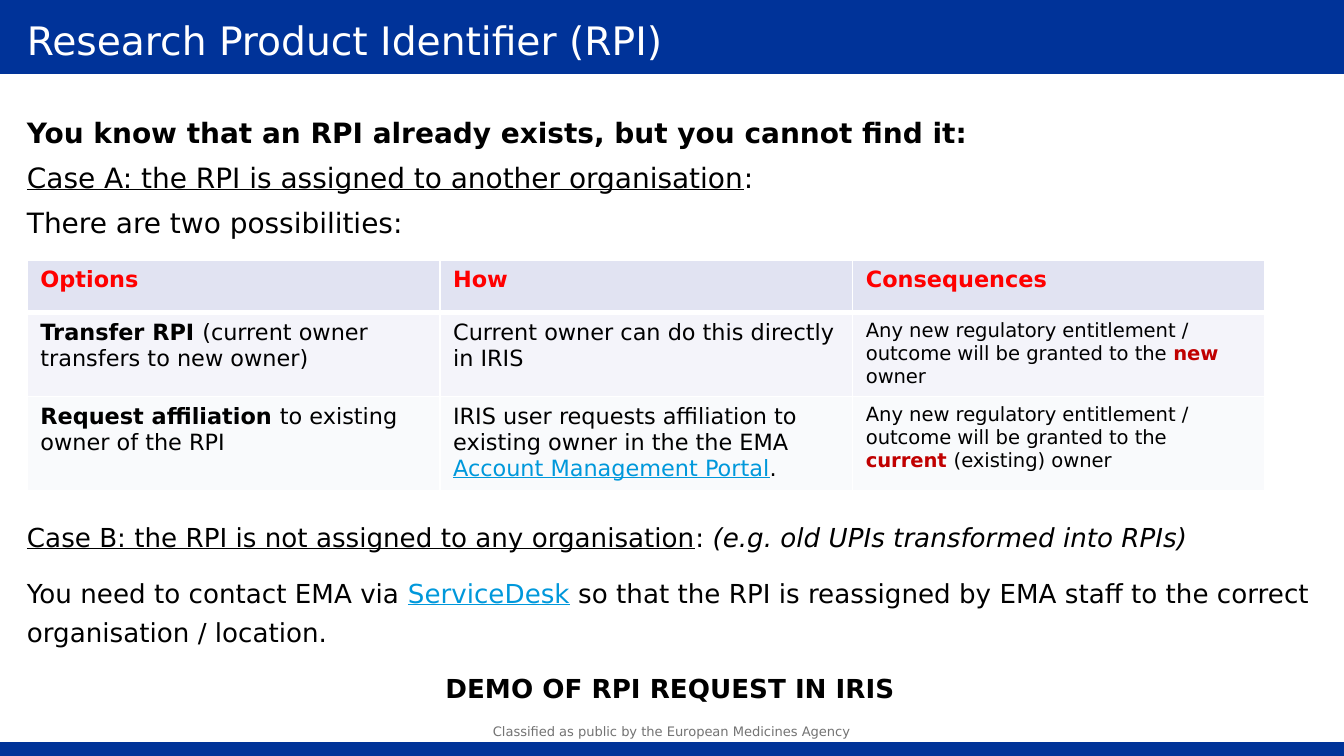
from lxml.etree import SubElement
from pptx import Presentation
from pptx.dml.color import RGBColor as RGB
from pptx.enum.shapes import MSO_CONNECTOR as LINE, MSO_SHAPE as SHAPE
from pptx.enum.text import MSO_ANCHOR as ANCHOR, PP_ALIGN as ALIGN
from pptx.oxml.ns import qn
from pptx.util import Cm, Pt

THEME = dict(
    font="DejaVu Sans",
    blue="003399", white="FFFFFF", black="000000", grey="737373",
    head="FF0000", accent="C00000", link="0098DB",
    row_fills=["E1E3F2", "F4F4FA", "F9FAFC"],
    title=21, lead=15, body=14, cell=12, cell_small=10.5, footer=7,
)

# A run is (text, marks): b bold, i italic, u underline, or a colour name.
TITLE = [("Research Product Identifier (RPI)", "white")]
FOOTER = [("Classified as public by the European Medicines Agency", "grey")]
CASE_A = [
    [("You know that an RPI already exists, but you cannot find it:", "b")],
    [("Case A: the RPI is assigned to another organisation", "u"), (":", "")],
    [("There are two possibilities:", "")],
]
CASE_B = [
    [("Case B: the RPI is not assigned to any organisation", "u"), (": ", ""),
     ("(e.g. old UPIs transformed into RPIs)", "i")],
    [("You need to contact EMA via ", ""), ("ServiceDesk", "u link"),
     (" so that the RPI is reassigned by EMA staff to the correct "
      "organisation / location.", "")],
]
DEMO = [("DEMO OF RPI REQUEST IN IRIS", "b")]
OUTCOME = "Any new regulatory entitlement / outcome will be granted to the "
OPTIONS = [
    [[("Options", "b head")], [("How", "b head")], [("Consequences", "b head")]],
    [[("Transfer RPI ", "b"), ("(current owner transfers to new owner)", "")],
     [("Current owner can do this directly in IRIS", "")],
     [(OUTCOME, ""), ("new ", "b accent"), ("owner", "")]],
    [[("Request affiliation ", "b"), ("to existing owner of the RPI", "")],
     [("IRIS user requests affiliation to existing owner in the the EMA ", ""),
      ("Account Management Portal", "u link"), (".", "")],
     [(OUTCOME, ""), ("current ", "b accent"), ("(existing) owner", "")]],
]

WIDTH, HEIGHT = 25.4, 14.29
MARGIN, BODY_W = 0.51, 24.31
BAR_H, FOOT_H = 1.4, 0.26
TABLE_TOP, COL_W = 4.91, 7.8
ROW_H = [1.0, 1.55, 1.75]


def color(name):
    return RGB.from_string(THEME[name])


def write(p, runs, size, align=ALIGN.LEFT, line=None, after=0):
    p.alignment = align
    p.space_after = Pt(after)
    if line:
        p.line_spacing = Pt(line)
    for text, marks in runs:
        marks = marks.split()
        r = p.add_run()
        r.text = text
        font = r.font
        font.name, font.size = THEME["font"], Pt(size)
        font.bold, font.italic, font.underline = (m in marks for m in "biu")
        names = [m for m in marks if m in THEME]
        font.color.rgb = color(names[0] if names else "black")


def add_text(s, x, y, w, h, paragraphs, anchor=ANCHOR.TOP):
    """Each paragraph is a dict of arguments for write()."""
    tf = s.shapes.add_textbox(Cm(x), Cm(y), Cm(w), Cm(h)).text_frame
    tf.word_wrap, tf.vertical_anchor = True, anchor
    tf.margin_left = tf.margin_right = tf.margin_top = tf.margin_bottom = 0
    for n, kwargs in enumerate(paragraphs):
        write(tf.add_paragraph() if n else tf.paragraphs[0], **kwargs)


def add_bar(s, y, h):
    sp = s.shapes.add_shape(SHAPE.RECTANGLE, 0, Cm(y), Cm(WIDTH), Cm(h))
    sp.shadow.inherit = False
    sp.fill.solid()
    sp.fill.fore_color.rgb = color("blue")
    sp.line.fill.background()


def add_rule(s, y):
    ln = s.shapes.add_connector(LINE.STRAIGHT, 0, Cm(y), Cm(WIDTH), Cm(y))
    ln.line.color.rgb, ln.line.width = color("white"), Pt(0.25)
    SubElement(ln._element.spPr, qn("a:effectLst"))


def set_borders(cell, **widths):
    """Draw white borders; widths are points by side, in the order L, R, T, B."""
    tc_pr = cell._tc.get_or_add_tcPr()
    for side, width in widths.items():
        ln = SubElement(tc_pr, qn(f"a:ln{side}"), w=str(Pt(width)))
        fill = SubElement(ln, qn("a:solidFill"))
        SubElement(fill, qn("a:srgbClr"), val=THEME["white"])


def add_options_table(s):
    cols = len(OPTIONS[0])
    table = s.shapes.add_table(len(OPTIONS), cols, Cm(MARGIN), Cm(TABLE_TOP),
                               Cm(COL_W * cols), Cm(sum(ROW_H))).table
    table.first_row = table.horz_banding = False
    for col in table.columns:
        col.width = Cm(COL_W)
    for i, row in enumerate(OPTIONS):
        table.rows[i].height = Cm(ROW_H[i])
        for j, runs in enumerate(row):
            cell = table.cell(i, j)
            set_borders(cell, L=1, R=1, T=3 if i == 1 else 1, B=3 if i == 0 else 1)
            cell.fill.solid()
            cell.fill.fore_color.rgb = RGB.from_string(THEME["row_fills"][i])
            small = i > 0 and j == cols - 1
            write(cell.text_frame.paragraphs[0], runs,
                  THEME["cell_small" if small else "cell"])


def main():
    prs = Presentation()
    prs.slide_width, prs.slide_height = Cm(WIDTH), Cm(HEIGHT)
    s = prs.slides.add_slide(prs.slide_layouts[6])

    add_bar(s, 0, BAR_H)
    add_rule(s, BAR_H)
    add_bar(s, HEIGHT - FOOT_H, FOOT_H)
    add_text(s, 8.92, 13.54, 7.54, 0.58,
             [dict(runs=FOOTER, size=THEME["footer"], align=ALIGN.CENTER)],
             ANCHOR.MIDDLE)
    add_text(s, MARGIN, 0.25, 23.39, 1.1,
             [dict(runs=TITLE, size=THEME["title"], line=27)])
    add_text(s, MARGIN, 2.08, BODY_W, 2.54,
             [dict(runs=r, size=THEME["lead"], line=21, after=3) for r in CASE_A])
    add_options_table(s)
    case_b = [dict(runs=r, size=THEME["body"], line=21, after=9) for r in CASE_B]
    demo = dict(runs=DEMO, size=THEME["body"], line=21, align=ALIGN.CENTER)
    add_text(s, MARGIN, 9.7, BODY_W, 3.6, case_b + [demo])
    prs.save("out.pptx")


if __name__ == "__main__":
    main()
